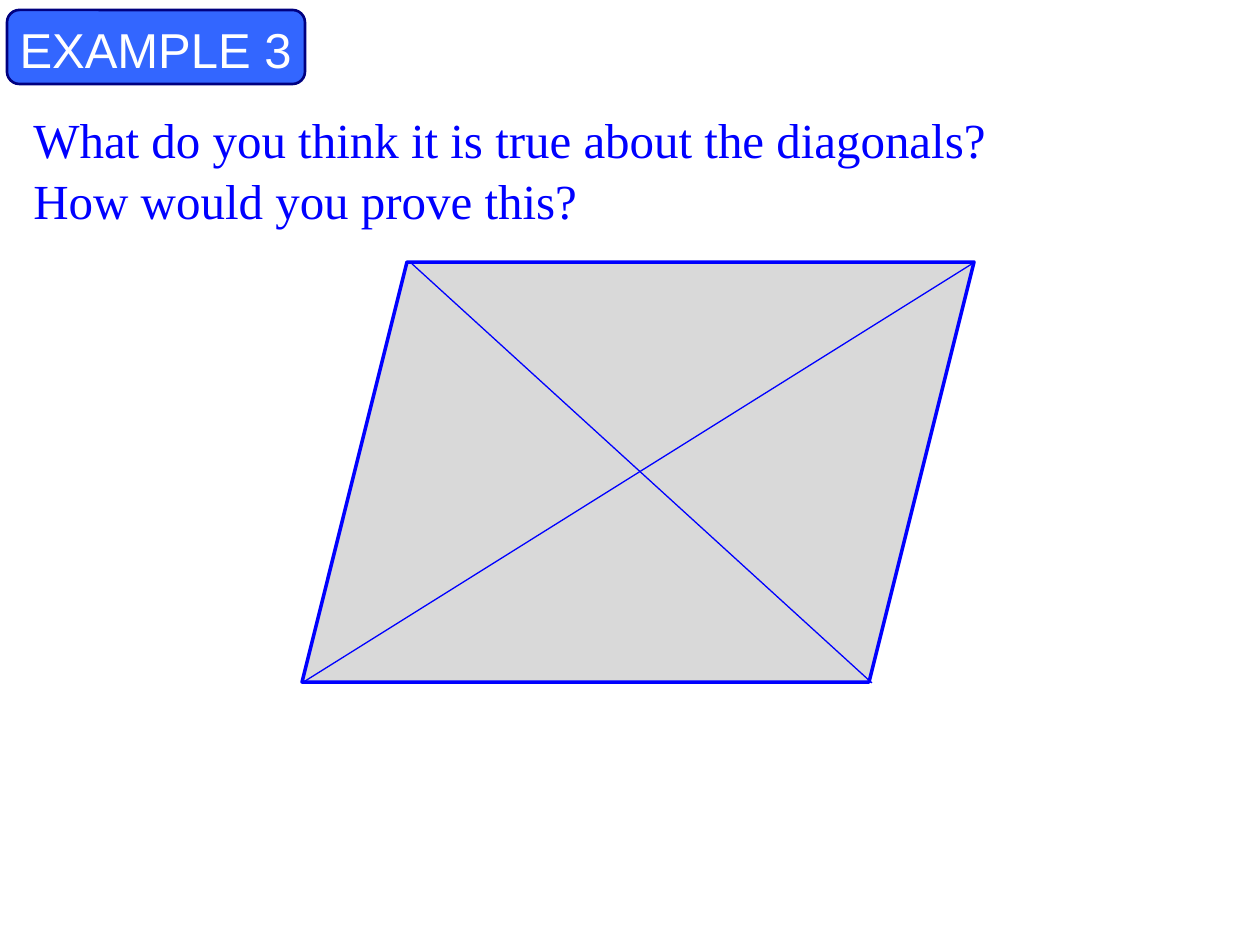
from lxml.etree import SubElement
from pptx import Presentation
from pptx.dml.color import RGBColor
from pptx.enum.shapes import MSO_CONNECTOR as Link, MSO_SHAPE as Kind
from pptx.enum.text import MSO_ANCHOR as Anchor, PP_ALIGN as Align
from pptx.oxml.ns import qn
from pptx.util import Inches, Pt

BLUE = RGBColor(0x00, 0x00, 0xFF)
NAVY = RGBColor(0x00, 0x00, 0x80)
AZURE = RGBColor(0x33, 0x66, 0xFF)
GREY = RGBColor(0xD9, 0xD9, 0xD9)
WHITE = RGBColor(0xFF, 0xFF, 0xFF)

LABEL = ("EXAMPLE 3", "Arial", WHITE, (7, 10, 465, 72))
ASK = ("What do you think it is true about the diagonals? How would you prove this?",
       "Times New Roman", BLUE, (21, 100, 1018, 131))
BADGE = (Kind.ROUNDED_RECTANGLE, (7, 10, 298, 74), AZURE, NAVY, 1.5)
FIGURE = (Kind.PARALLELOGRAM, (302, 262, 672, 420), GREY, BLUE, 2)
DIAGONALS = [(410, 262, 872, 683), (302, 683, 975, 262)]


def px(*nums):
    return [round(n * Inches(1) / 126) for n in nums]


def draw(slide, kind, box, fill, edge, width):
    shape = slide.shapes.add_shape(kind, *px(*box))
    shape.shadow.inherit = False
    shape.fill.solid()
    shape.fill.fore_color.rgb = fill
    shape.line.color.rgb = edge
    shape.line.width = Pt(width)


def write(shape, text, face, color, box):
    shape.left, shape.top, shape.width, shape.height = px(*box)
    frame = shape.text_frame
    frame.word_wrap = True
    frame.vertical_anchor = Anchor.TOP
    para = frame.paragraphs[0]
    para.alignment = Align.LEFT
    para.line_spacing = 1.05
    run = para.add_run()
    run.text = text
    run.font.name = face
    run.font.size = Pt(28)
    run.font.color.rgb = color


def join(slide, ends):
    line = slide.shapes.add_connector(Link.STRAIGHT, *px(*ends))
    line.line.color.rgb = BLUE
    line.line.width = Pt(0.75)
    SubElement(line._element.spPr, qn("a:effectLst"))


def main():
    deck = Presentation()
    deck.slide_width, deck.slide_height = Inches(10), Inches(7.5)
    slide = deck.slides.add_slide(deck.slide_layouts[5])
    title = slide.shapes.title
    draw(slide, *BADGE)
    slide.shapes._spTree.append(title._element)
    write(title, *LABEL)
    draw(slide, *FIGURE)
    write(slide.shapes.add_textbox(0, 0, 0, 0), *ASK)
    for ends in DIAGONALS:
        join(slide, ends)
    deck.save("out.pptx")


if __name__ == "__main__":
    main()
